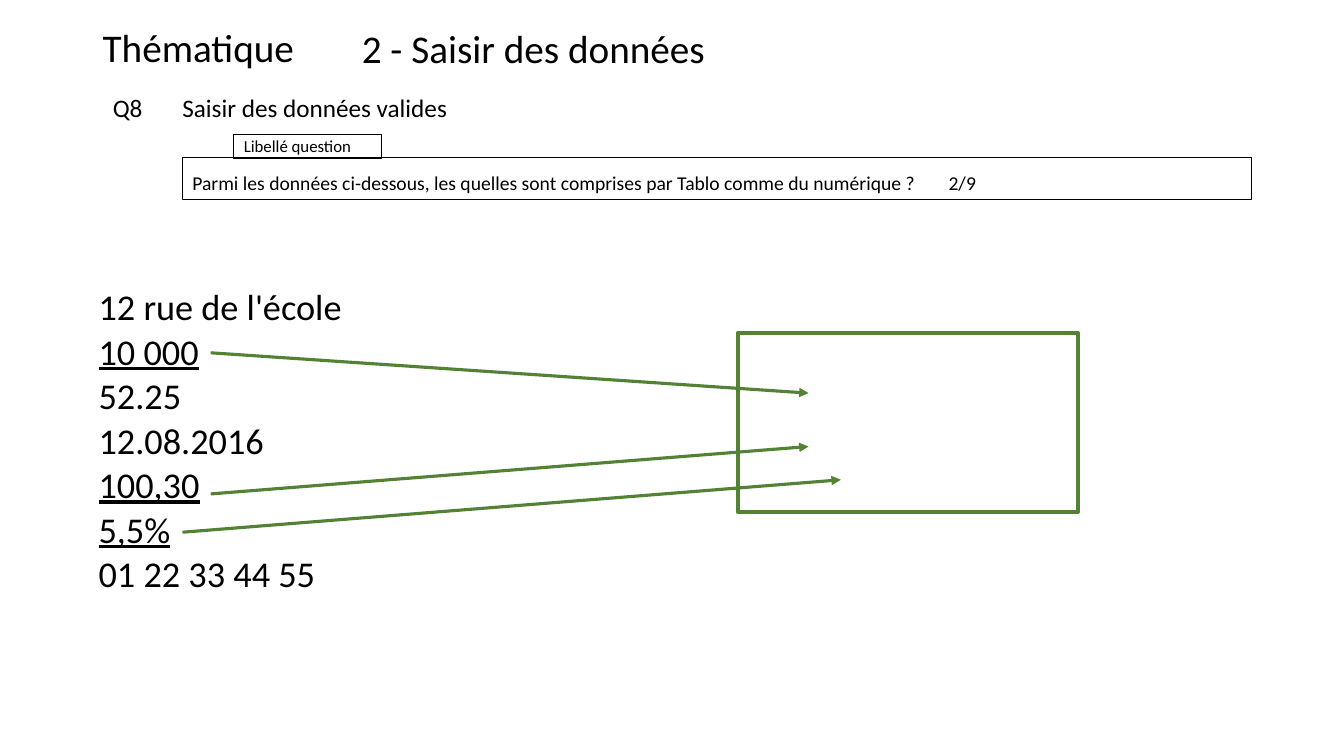
from dataclasses import dataclass

from lxml import etree
from pptx import Presentation
from pptx import util as u
from pptx.dml.color import RGBColor
from pptx.enum import shapes, text
from pptx.oxml import ns


@dataclass(frozen=True)
class Theme:
    font: str = "Calibri"
    ink: str = "000000"
    paper: str = "FFFFFF"
    green: str = "548235"
    title: float = 28
    list: float = 25.9
    head: float = 18
    body: float = 14
    small: float = 12


THEME = Theme()
MID = text.MSO_ANCHOR.MIDDLE
LOW = text.MSO_ANCHOR.BOTTOM
TOP = text.MSO_ANCHOR.TOP


def rgb(code):
    return RGBColor.from_string(code)


def write(shape, lines, size, anchor=TOP, space=None, gap=0, inset=0.05, marked=()):
    frame = shape.text_frame
    frame.word_wrap = True
    frame.vertical_anchor = anchor
    frame.margin_top = u.Inches(inset)
    for i, line in enumerate(lines):
        para = frame.paragraphs[0] if i == 0 else frame.add_paragraph()
        para.alignment = text.PP_ALIGN.LEFT
        para.line_spacing = space
        para.space_before = u.Pt(gap)
        run = para.add_run()
        run.text = line
        run.font.name = THEME.font
        run.font.size = u.Pt(size)
        run.font.color.rgb = rgb(THEME.ink)
        if line in marked:
            run.font.underline = True


def label(slide, box, lines, size, **style):
    shape = slide.shapes.add_textbox(*map(u.Inches, box))
    write(shape, lines, size, **style)


def frame(slide, box, color, width, fill=None):
    shape = slide.shapes.add_shape(shapes.MSO_SHAPE.RECTANGLE, *map(u.Inches, box))
    shape.shadow.inherit = False
    if fill:
        shape.fill.solid()
        shape.fill.fore_color.rgb = rgb(fill)
    else:
        shape.fill.background()
    shape.line.color.rgb = rgb(color)
    shape.line.width = u.Pt(width)
    return shape


def arrow(slide, start, end):
    line = slide.shapes.add_connector(
        shapes.MSO_CONNECTOR.STRAIGHT, *map(u.Inches, start + end))
    line.line.color.rgb = rgb(THEME.green)
    line.line.width = u.Pt(2.25)
    props = line.line._get_or_add_ln()
    etree.SubElement(props, ns.qn("a:tailEnd"), type="triangle")
    etree.SubElement(line._element.spPr, ns.qn("a:effectLst"))


def main():
    deck = Presentation()
    deck.slide_width = u.Inches(13.33)
    deck.slide_height = u.Inches(7.5)
    slide = deck.slides.add_slide(deck.slide_layouts[6])

    label(slide, (0.92, 0.18, 2.27, 0.57), ["Thématique"], THEME.title, anchor=MID)
    tag = frame(slide, (2.32, 1.33, 1.46, 0.24), THEME.ink, 0.75, THEME.paper)
    write(tag, ["Libellé question"], THEME.small, inset=0.02)
    query = frame(slide, (1.81, 1.56, 10.6, 0.42), THEME.ink, 0.75)
    write(query, ["Parmi les données ci-dessous, les quelles sont comprises "
                  "par Tablo comme du numérique ?\t2/9"],
          THEME.body, anchor=LOW, space=0.9, gap=10)
    label(slide, (3.49, 0.14, 8.93, 0.73), ["2 - Saisir des données"],
          THEME.title, anchor=MID, space=0.9)

    items = ["12 rue de l'école", "10 000", "52.25", "12.08.2016",
             "100,30", "5,5%", "01 22 33 44 55"]
    label(slide, (0.88, 2.89, 4.63, 3.34), items, THEME.list,
          space=0.7, gap=10, marked=("10 000", "100,30", "5,5%"))
    for left, width, line in ((1.02, 0.68, "Q8"),
                              (1.71, 10.71, "Saisir des données valides")):
        label(slide, (left, 0.87, width, 0.42), [line], THEME.head,
              anchor=MID, space=0.9, gap=10)

    frame(slide, (7.32, 3.3, 3.37, 1.78), THEME.green, 3)
    for start, end in (((2.09, 3.5), (8.02, 3.9)),
                       ((2.09, 4.9), (8.02, 4.43)),
                       ((1.81, 5.28), (8.34, 4.76))):
        arrow(slide, start, end)

    deck.save("out.pptx")


if __name__ == "__main__":
    main()
